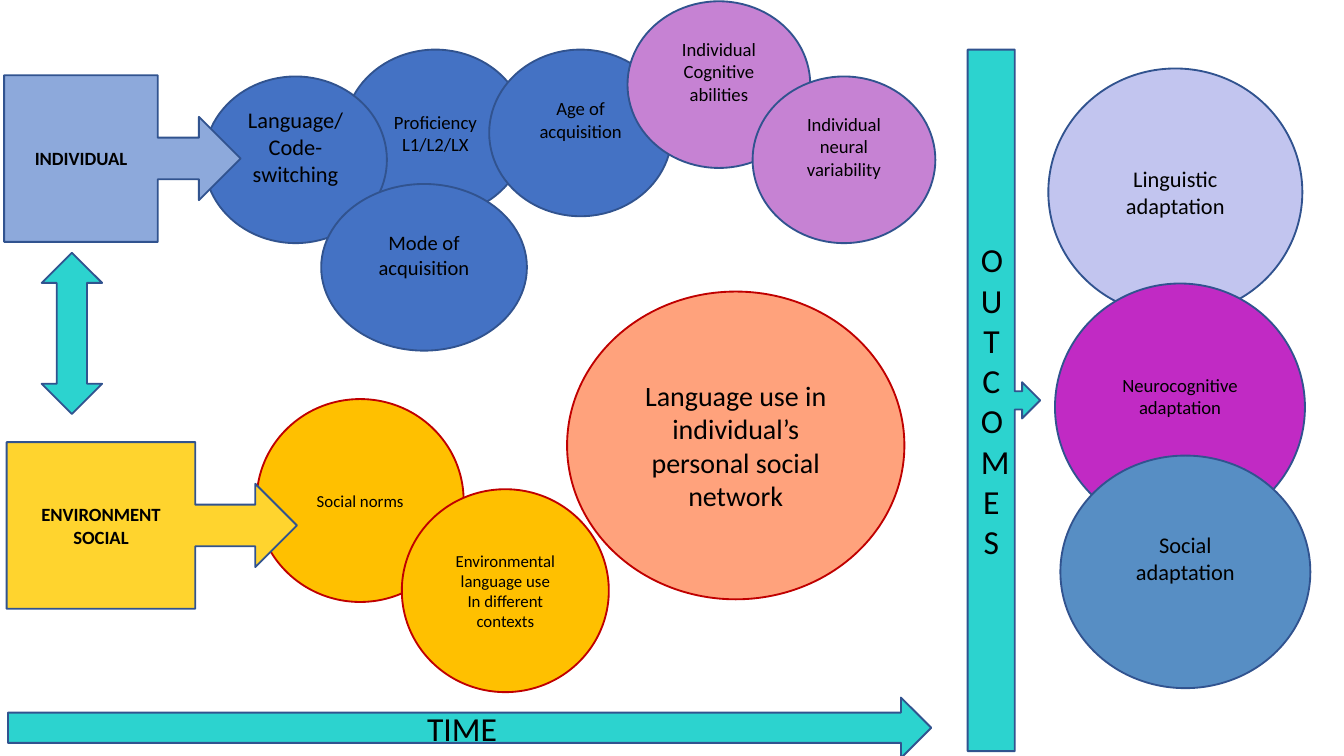
from dataclasses import dataclass

import pptx
import pptx.dml.color
import pptx.enum.shapes
import pptx.enum.text
import pptx.oxml
import pptx.oxml.ns
import pptx.util

Pt = pptx.util.Pt
Kind = pptx.enum.shapes.MSO_SHAPE
OVAL, CALL = Kind.OVAL, Kind.RIGHT_ARROW_CALLOUT

COLORS = {
    "blue": "4472C4", "pale": "8DA9DB", "steel": "578EC4", "lilac": "535BD3",
    "pink": "C682D3", "purple": "C12AC4", "gold": "FFC000", "yellow": "FFD42E",
    "salmon": "FFA27C", "teal": "2CD3CF",
    "navy": "31538F", "red": "C00000", "black": "000000",
}
SMALL = (97.9, 89.3)    # circles about the person
ROUND = (110.9, 108.7)  # circles about the setting
FRAME = {
    "word_wrap": True,
    "vertical_anchor": pptx.enum.text.MSO_ANCHOR.MIDDLE,
    "margin_left": Pt(7.2), "margin_right": Pt(7.2), "margin_top": Pt(3.6),
}


@dataclass
class Part:
    kind: Kind
    left: float
    top: float
    size: tuple[float, float]
    fill: str
    text: str = ""
    font: float = 10
    lift: float = 0  # font size of the line kept free below the text
    line: str = "navy"
    bold: bool = False
    alpha: int = 100


# Listed from back to front
PARTS = [
    Part(OVAL, 184.3, 26.6, SMALL, "blue", "Proficiency\nL1/L2/LX"),
    Part(OVAL, 137.5, 213.8, ROUND, "gold", "Social norms", 9, line="red"),
    Part(OVAL, 109.4, 41, SMALL, "blue", "Language/Code-switching", 12, 12),
    Part(OVAL, 262.1, 26.6, SMALL, "blue", "Age of acquisition", 10, 12),
    Part(CALL, 518.4, 26.6, (38.9, 375.8), "teal", "OUTCOMES", 18),
    Part(OVAL, 561.6, 36.7, (136.1, 132.5), "lilac",
         "Linguistic adaptation", 12, alpha=35),
    Part(OVAL, 565.2, 151.9, (133.9, 132.5), "purple",
         "Neurocognitive adaptation", 10, 10),
    Part(CALL, 2.2, 40.3, (126.7, 89.3), "pale", "INDIVIDUAL", bold=True),
    Part(CALL, 3.6, 236.9, (155.5, 89.3), "yellow",
         "ENVIRONMENT\nSOCIAL", bold=True),
    Part(OVAL, 336.2, 0.7, SMALL, "pink",
         "Individual Cognitive abilities", 10, 12),
    Part(OVAL, 403.2, 41, SMALL, "pink",
         "Individual neural variability", 10, 12),
    Part(Kind.RIGHT_ARROW, 4.3, 373.7, (494.6, 32.4), "teal", "TIME", 18),
    Part(OVAL, 215.3, 262.1, ROUND, "gold",
         "Environmental language use\nIn different contexts", 9, line="red"),
    Part(OVAL, 303.8, 156.2, (180.7, 164.9), "salmon",
         "Language use in individual’s personal social network", 15,
         line="red"),
    Part(OVAL, 568.1, 244.1, (133.9, 124.6), "steel",
         "Social\nadaptation", 12, 12),
    Part(Kind.UP_DOWN_ARROW, 22.3, 135.4, (32.4, 86.4), "teal"),
    Part(OVAL, 172.1, 98.6, (110.2, 89.3), "blue",
         "Mode of acquisition", 11, 11),
]


def tint(name: str) -> pptx.dml.color.RGBColor:
    return pptx.dml.color.RGBColor.from_string(COLORS[name])


def apply(target: object, values: dict) -> None:
    for key, value in values.items():
        setattr(target, key, value)


def fade(shape, alpha: int) -> None:
    """Make the fill of a shape partly clear."""
    node = shape.fill._xPr.find(".//" + pptx.oxml.ns.qn("a:srgbClr"))
    node.append(pptx.oxml.parse_xml(
        f'<a:alpha {pptx.oxml.ns.nsdecls("a")} val="{alpha * 1000}"/>'))


def write(shape, part: Part) -> None:
    frame = shape.text_frame
    apply(frame, FRAME | {"margin_bottom": Pt(3.6 + 1.2 * part.lift)})
    frame.text = part.text
    style = {"name": "Calibri", "size": Pt(part.font), "bold": part.bold}
    for para in frame.paragraphs:
        para.alignment = pptx.enum.text.PP_ALIGN.CENTER
        for run in para.runs:
            apply(run.font, style)
            run.font.color.rgb = tint("black")


def draw(slide, part: Part) -> None:
    box = map(Pt, (part.left, part.top, *part.size))
    shape = slide.shapes.add_shape(part.kind, *box)
    shape.shadow.inherit = False
    shape.fill.solid()
    shape.fill.fore_color.rgb = tint(part.fill)
    shape.line.color.rgb = tint(part.line)
    shape.line.width = Pt(1)
    if part.alpha < 100:
        fade(shape, part.alpha)
    if part.text:
        write(shape, part)


def main() -> None:
    deck = pptx.Presentation()
    apply(deck, {"slide_width": Pt(720), "slide_height": Pt(405)})
    slide = deck.slides.add_slide(deck.slide_layouts[6])
    for part in PARTS:
        draw(slide, part)
    deck.save("out.pptx")


if __name__ == "__main__":
    main()
